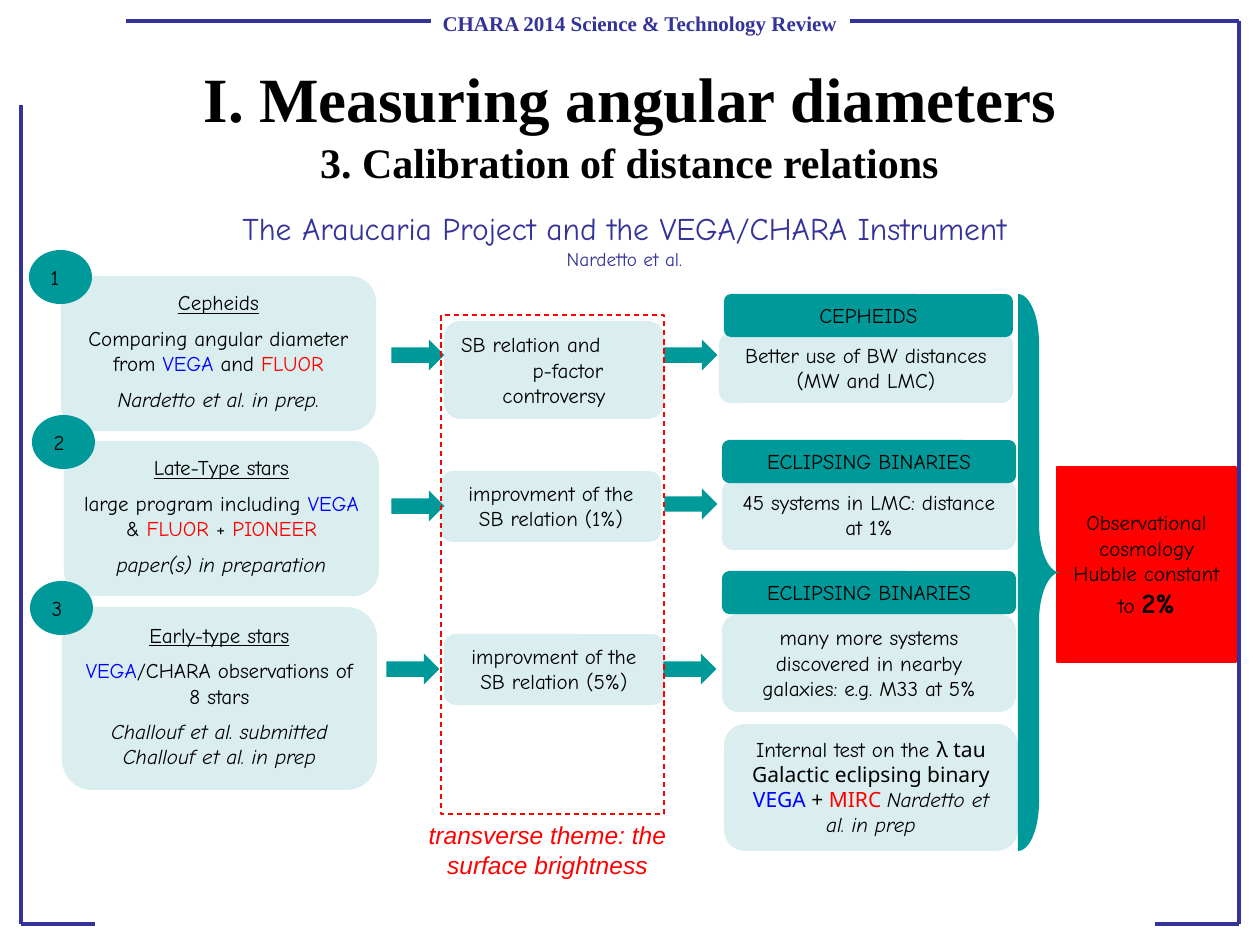
from dataclasses import dataclass

from lxml import etree
from pptx import Presentation
from pptx import util as u
from pptx.dml.color import RGBColor
from pptx.enum import dml, shapes, text
from pptx.oxml import ns

PX = 914400 / 126
KIND = shapes.MSO_SHAPE
ALIGN = text.PP_ALIGN
ANCHOR = text.MSO_ANCHOR


@dataclass(frozen=True)
class Theme:
    """Colours, fonts and type sizes of the slide."""
    frame: str = "333399"
    black: str = "000000"
    blue: str = "0000FF"
    red: str = "FF0000"
    teal: str = "009999"
    pale: str = "DAEDEF"
    serif: str = "Times New Roman"
    hand: str = "Comic Neue"
    sans: str = "Noto Sans"
    plain: str = "Arial"
    title: int = 36
    subtitle: int = 24
    project: int = 18
    result: int = 16
    theme: int = 14
    body: int = 12
    credit: int = 11
    gap: int = 6


T = Theme()


def px(*lengths):
    """Turn pixel lengths into EMU."""
    return [round(length * PX) for length in lengths]


def run(words, color=T.black, size=T.body, face=T.hand, **marks):
    """Describe one run of text."""
    return words, color, size, face, marks


def add_run(para, words, color, size, face, marks):
    """Append one formatted run to a paragraph."""
    span = para.add_run()
    span.text = words
    span.font.name = face
    span.font.size = u.Pt(size)
    span.font.color.rgb = RGBColor.from_string(color)
    for mark, value in marks.items():
        setattr(span.font, mark, value)


def write(box, paras, align=ALIGN.CENTER, anchor=ANCHOR.TOP, gap=0):
    """Fill a shape with paragraphs, each a list of runs."""
    frame = box.text_frame
    frame.word_wrap = True
    frame.vertical_anchor = anchor
    for index, runs in enumerate(paras):
        para = frame.add_paragraph() if index else frame.paragraphs[0]
        para.alignment = align
        para.space_before = u.Pt(gap if index else 0)
        for item in runs:
            add_run(para, *item)


def add_label(page, place, paras, **layout):
    """Add a text box."""
    box = page.shapes.add_textbox(*px(*place))
    write(box, paras, **layout)


def add_block(page, kind, place, fill, paras=(), **layout):
    """Add a filled shape without outline."""
    box = page.shapes.add_shape(kind, *px(*place))
    box.shadow.inherit = False
    box.fill.solid()
    box.fill.fore_color.rgb = RGBColor.from_string(fill)
    box.line.fill.background()
    write(box, paras, **layout)
    return box


def add_card(page, place, paras, fill=T.pale):
    """Add a rounded card."""
    return add_block(page, KIND.ROUNDED_RECTANGLE, place, fill, paras, gap=T.gap)


def add_arrow(page, x, y):
    """Add a right-pointing block arrow centred on a point."""
    width, height = 31, 53
    arrow = add_block(page, KIND.DOWN_ARROW,
                      (x - width / 2, y - height / 2, width, height), T.teal)
    arrow.rotation = 270


def add_frame_line(page, *ends):
    """Add one line of the page frame."""
    line = page.shapes.add_connector(shapes.MSO_CONNECTOR.STRAIGHT, *px(*ends))
    line.line.color.rgb = RGBColor.from_string(T.frame)
    line.line.width = u.Pt(2.25)
    etree.SubElement(line._element.spPr, ns.qn("a:effectLst"))


def add_headings(page):
    """Add the page frame and all headings."""
    for ends in [(21, 105, 21, 924), (21, 924, 95, 924), (850, 21, 1239, 21),
                 (1239, 21, 1239, 924), (126, 21, 431, 21), (1155, 924, 1239, 924)]:
        add_frame_line(page, *ends)
    add_label(page, (420, 4, 440, 38), [[run(
        "CHARA 2014 Science & Technology Review", T.frame, face=T.serif, bold=True)]])
    add_label(page, (0, 32, 1260, 131), [[run(
        "I. Measuring angular diameters", size=T.title, face=T.serif, bold=True)]],
        anchor=ANCHOR.MIDDLE)
    title = page.shapes.title
    title.left, title.top, title.width, title.height = px(19, 129, 1221, 66)
    write(title, [[run("3. Calibration of distance relations", size=T.subtitle,
                       face=T.serif, bold=True)]], anchor=ANCHOR.MIDDLE)
    add_label(page, (10, 203, 1229, 74), [
        [run("The Araucaria Project and the VEGA/CHARA Instrument", T.frame, T.project)],
        [run("Nardetto et al.", T.frame, T.credit)]])


def add_programs(page):
    """Add the numbered observing programs."""
    programs = [
        (61, 276, 155, "Cepheids",
         [run("Comparing angular diameter from "), run("VEGA ", T.blue), run("and "),
          run("FLUOR", T.red)], "Nardetto et al. in prep."),
        (64, 441, 155, "Late-Type stars",
         [run("large program including "), run("VEGA", T.blue), run(" & "),
          run("FLUOR ", T.red), run("+ "), run("PIONEER", T.red)],
         "paper(s) in preparation"),
        (62, 607, 183, "Early-type stars",
         [run("VEGA", T.blue), run("/CHARA observations of 8 stars")],
         "Challouf et al. submitted Challouf et al. in prep")]
    for number, (x, y, height, name, work, paper) in enumerate(programs, 1):
        add_card(page, (x, y, 315, height), [
            [run(name, underline=True)], work, [run(paper, italic=True)]])
        add_block(page, KIND.OVAL, (x - 32, y - 26, 63, 54), T.teal,
                  [[run(str(number))]], align=ALIGN.LEFT)


def add_relations(page):
    """Add the surface brightness column with its arrows."""
    controversy = add_block(
        page, KIND.ROUNDED_RECTANGLE, (444, 321, 220, 98), T.pale,
        [[run(words)] for words in ("SB relation and", "p-factor", "controversy")])
    first, second, _ = controversy.text_frame.paragraphs
    first.alignment = ALIGN.LEFT
    second._p.get_or_add_pPr().set("marL", str(px(28)[0]))
    for x, y, share in [(441, 471, "1%"), (444, 634, "5%")]:
        add_card(page, (x, y, 220, 71), [[run(f"improvment of the SB relation ({share})")]])
    for center in [(418, 355), (418, 506), (413, 669), (691, 355), (691, 504), (690, 669)]:
        add_arrow(page, *center)
    border = page.shapes.add_shape(KIND.RECTANGLE, *px(441, 315, 223, 499))
    border.shadow.inherit = False
    border.fill.background()
    border.line.color.rgb = RGBColor.from_string(T.red)
    border.line.width = u.Pt(0.75)
    border.line.dash_style = dml.MSO_LINE.DASH
    add_label(page, (411, 814, 273, 72), [[run(
        "transverse theme: the surface brightness", T.red, T.theme, T.plain, italic=True)]])


def add_results(page):
    """Add the distance results and the final goal."""
    results = [
        ((719, 333, 294, 70), (724, 294, 289, 43), "CEPHEIDS",
         "Better use of BW distances (MW and LMC)"),
        ((722, 480, 294, 70), (722, 440, 294, 43), "ECLIPSING BINARIES",
         "45 systems in LMC: distance at 1%"),
        ((722, 614, 294, 98), (722, 571, 294, 43), "ECLIPSING BINARIES",
         "many more systems discovered in nearby galaxies: e.g. M33 at 5%")]
    for card, header, name, finding in results:
        add_card(page, card, [[run(finding)]])
        add_card(page, header, [[run(name)]], T.teal)
    add_card(page, (724, 724, 294, 127), [[
        run("Internal test on the "),
        run("λ tau Galactic eclipsing binary ", face=T.sans),
        run("VEGA ", T.blue, face=T.sans), run("+ ", face=T.sans),
        run("MIRC ", T.red, face=T.sans), run("Nardetto et al. in prep", italic=True)]])
    goal = add_block(page, KIND.RECTANGLE, (1057, 467, 179, 195), T.red, [
        [run("Observational cosmology")],
        [run("Hubble constant to "), run("2%", size=T.result, bold=True)]],
        anchor=ANCHOR.MIDDLE)
    goal.line.color.rgb = RGBColor.from_string(T.red)
    goal.line.width = u.Pt(1.5)
    brace = add_block(page, KIND.RIGHT_BRACE, (1018, 294, 42, 557), T.teal)
    brace.adjustments[0] = 1.17


def main():
    """Build the slide and save it."""
    deck = Presentation()
    deck.slide_width, deck.slide_height = px(1260, 945)
    page = deck.slides.add_slide(deck.slide_layouts[5])
    add_headings(page)
    add_programs(page)
    add_relations(page)
    add_results(page)
    deck.save("out.pptx")


if __name__ == "__main__":
    main()
